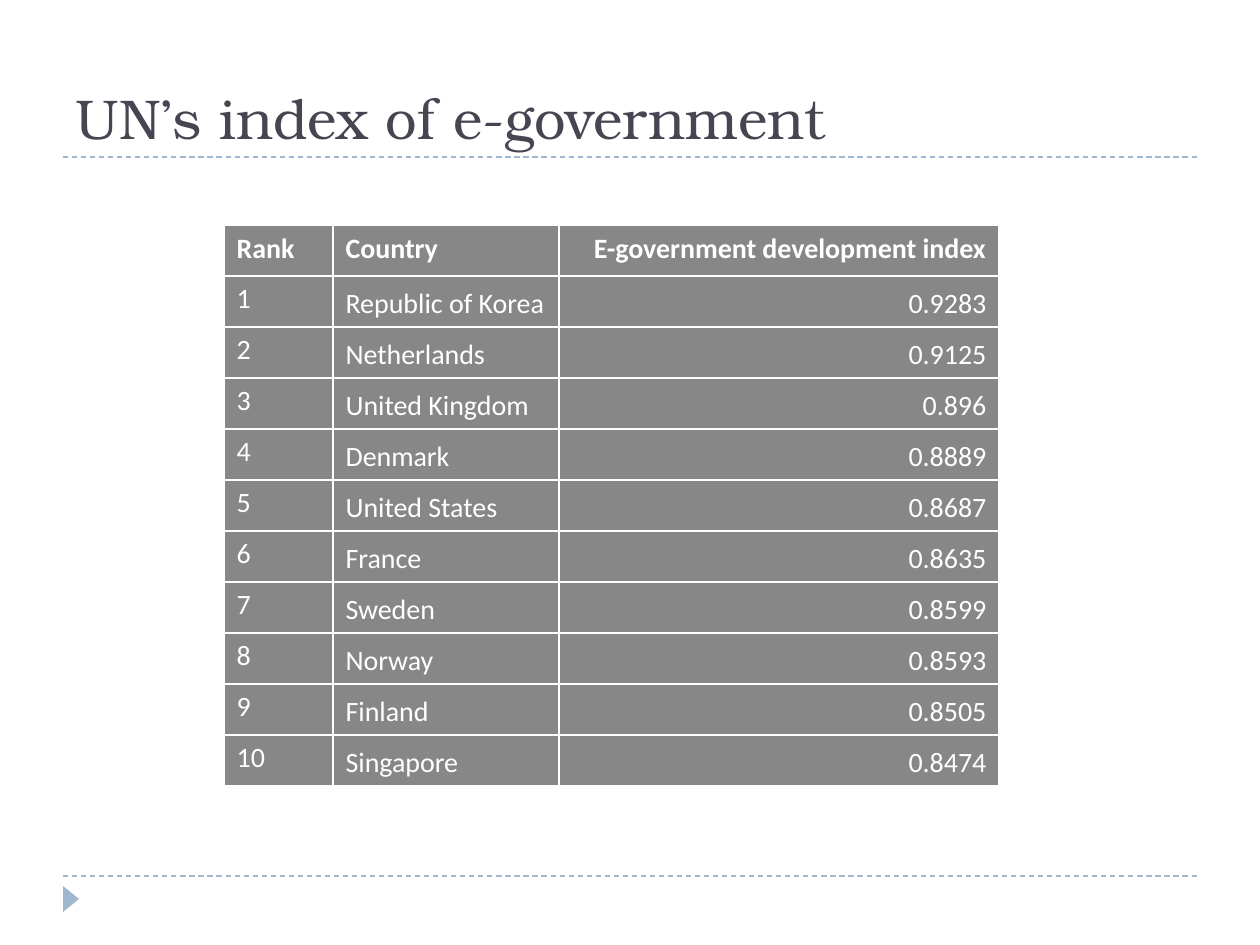
from pptx import Presentation
from pptx.dml.color import RGBColor
from pptx.enum.dml import MSO_LINE
from pptx.enum.shapes import MSO_CONNECTOR, MSO_SHAPE
from pptx.enum.text import MSO_ANCHOR as Anchor, PP_ALIGN as Align
from pptx.oxml.ns import qn
from pptx.util import Emu, Pt
from lxml.etree import SubElement

# Content
TITLE = "UN’s index of e-government"
HEADER = ("Rank", "Country", "E-government development index")
SCORES = [
    ("Republic of Korea", "0.9283"),
    ("Netherlands", "0.9125"),
    ("United Kingdom", "0.896"),
    ("Denmark", "0.8889"),
    ("United States", "0.8687"),
    ("France", "0.8635"),
    ("Sweden", "0.8599"),
    ("Norway", "0.8593"),
    ("Finland", "0.8505"),
    ("Singapore", "0.8474"),
]
ROWS = [HEADER] + [(str(rank), *score) for rank, score in enumerate(SCORES, 1)]

# Layout in px
WIDTH, HEIGHT, MARGIN = 1260, 945, 63
RULE_YS = (157, 876)
TABLE_LEFT, TABLE_TOP, ROW_HEIGHT = 224, 225, 51
COLUMN_WIDTHS = (109, 226, 440)
COLUMN_ALIGNS = (Align.LEFT, Align.LEFT, Align.RIGHT)

# Style
ACCENT, TITLE_COLOR, WHITE, BLACK = "9FB8CD", "464653", "FFFFFF", "000000"
CELL_OPACITY = 47


def px(length):
    return Emu(round(length * 914400 / 126))


def color(hex_code):
    return RGBColor.from_string(hex_code)


def add_text(para, text, font, size, hex_code, bold=False):
    span = para.add_run()
    span.text = text
    span.font.name, span.font.size, span.font.bold = font, Pt(size), bold
    span.font.color.rgb = color(hex_code)


def style_cell(cell):
    """White 1 pt borders around a translucent black fill."""
    props = cell._tc.get_or_add_tcPr()
    for side in ("a:lnL", "a:lnR", "a:lnT", "a:lnB"):
        border = SubElement(props, qn(side), w=str(Pt(1)))
        SubElement(SubElement(border, qn("a:solidFill")), qn("a:srgbClr"), val=WHITE)
    cell.fill.solid()
    cell.fill.fore_color.rgb = color(BLACK)
    fill_color = props.find(qn("a:solidFill"))[0]
    SubElement(fill_color, qn("a:alpha"), val=str(CELL_OPACITY * 1000))


deck = Presentation()
deck.slide_width, deck.slide_height = px(WIDTH), px(HEIGHT)
page = deck.slides.add_slide(deck.slide_layouts[6])

# Dashed rules
for y in RULE_YS:
    rule = page.shapes.add_connector(
        MSO_CONNECTOR.STRAIGHT, px(MARGIN), px(y), px(WIDTH - MARGIN), px(y))
    rule.line.color.rgb = color(ACCENT)
    rule.line.width = Pt(0.75)
    rule.line.dash_style = MSO_LINE.DASH
    SubElement(rule._element.spPr, qn("a:effectLst"))

# Corner marker
marker = page.shapes.add_shape(
    MSO_SHAPE.ISOSCELES_TRIANGLE, px(58), px(891), px(26), px(16))
marker.rotation = 90
marker.shadow.inherit = False
marker.fill.solid()
marker.fill.fore_color.rgb = color(ACCENT)
marker.line.fill.background()

# Title
box = page.shapes.add_textbox(px(MARGIN), px(21), px(WIDTH - 2 * MARGIN), px(136))
box.text_frame.word_wrap = True
box.text_frame.vertical_anchor = Anchor.BOTTOM
add_text(box.text_frame.paragraphs[0], TITLE, "TeX Gyre Bonum", 32, TITLE_COLOR)

# Ranking table
table = page.shapes.add_table(
    len(ROWS), len(HEADER), px(TABLE_LEFT), px(TABLE_TOP),
    px(sum(COLUMN_WIDTHS)), px(ROW_HEIGHT * len(ROWS))).table
for column, width in zip(table.columns, COLUMN_WIDTHS):
    column.width = px(width)
for r, texts in enumerate(ROWS):
    table.rows[r].height = px(ROW_HEIGHT)
    for c, (text, align) in enumerate(zip(texts, COLUMN_ALIGNS)):
        cell = table.cell(r, c)
        style_cell(cell)
        cell.vertical_anchor = Anchor.BOTTOM if r and c else Anchor.TOP
        para = cell.text_frame.paragraphs[0]
        para.alignment = align
        add_text(para, text, "Calibri", 16, WHITE, bold=r == 0)

deck.save("out.pptx")
